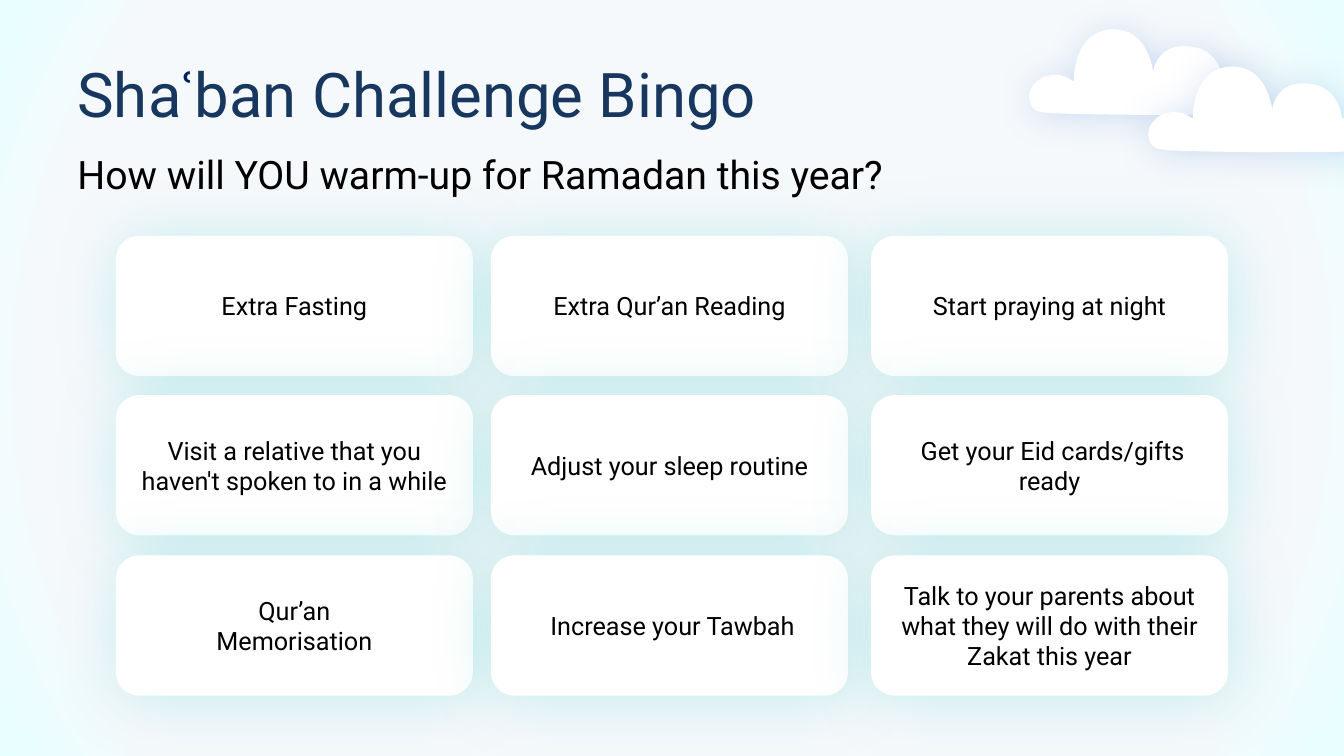
from dataclasses import dataclass

from lxml.etree import SubElement
from pptx import Presentation
from pptx.dml.color import RGBColor
from pptx.enum.shapes import MSO_SHAPE
from pptx.enum.text import MSO_ANCHOR, PP_ALIGN
from pptx.oxml.ns import qn
from pptx.util import Inches, Pt


@dataclass(frozen=True)
class Theme:
    font: str = "Roboto"
    title: str = "17375E"
    title_mark: str = "002060"
    text: str = "000000"
    white: str = "FFFFFF"
    centre: str = "F6F9FC"
    edge: str = "E7FFFF"
    card_shadow: str = "00B4B1"
    cloud_shadow: str = "8EB4E3"
    title_size: int = 44
    subtitle_size: int = 28
    card_size: int = 18


THEME = Theme()

CARD_LEFTS = (1.15, 4.87, 8.64)
CARD_TOPS = (2.34, 3.92, 5.51)
CARD_WIDTH, CARD_HEIGHT = 3.54, 1.39
LABEL_WIDTH, LABEL_HEIGHT = 3.23, 1.26
LABEL_INSET = 0.07
CHALLENGES = (
    ("Extra Fasting", "Extra Qur’an Reading", "Start praying at night"),
    ("Visit a relative that you haven't spoken to in a while",
     "Adjust your sleep routine",
     " Get your Eid cards/gifts ready"),
    ("Qur’an\nMemorisation",
     " Increase your Tawbah",
     "Talk to your parents about what they will do with their Zakat this year"),
)

# Cloud outline: a start point, then Bézier curves (two controls and an end).
CLOUD_START = (1.59, 0.17)
CLOUD_CURVES = (
    ((1.32, 0.14), (1.24, 0.33), (1.23, 0.42)),
    ((1.21, 0.35), (1.16, 0), (0.83, 0)),
    ((0.47, 0.01), (0.44, 0.41), (0.44, 0.52)),
    ((0.37, 0.46), (0.28, 0.44), (0.19, 0.46)),
    ((0.1, 0.48), (0.02, 0.55), (0, 0.64)),
    ((-0.01, 0.7), (0.01, 0.77), (0.06, 0.8)),
    ((0.09, 0.82), (0.13, 0.82), (0.17, 0.83)),
    ((0.49, 0.85), (1.87, 0.86), (1.99, 0.84)),
    ((2.08, 0.82), (2.19, 0.79), (2.2, 0.7)),
    ((2.21, 0.63), (2.16, 0.57), (2.1, 0.54)),
    ((2.04, 0.52), (1.98, 0.51), (1.92, 0.51)),
    ((1.91, 0.47), (1.89, 0.2), (1.59, 0.17)),
)
CLOUD_ORIGINS = ((10.21, 0.29), (11.39, 0.66))


def add_run(p, text, size, color, bold=False, spacing=0):
    """Add a run; spacing is the letter spacing in points."""
    r = p.add_run()
    r.text = text
    r.font.name = THEME.font
    r.font.size = Pt(size)
    r.font.bold = bold
    r.font.color.rgb = RGBColor.from_string(color)
    if spacing:
        r.font._element.set("spc", str(spacing * 100))


def set_background(slide):
    fill = slide.background.fill
    fill.gradient()
    stops = ((0.81, THEME.centre), (1, THEME.edge))
    for stop, (position, color) in zip(fill.gradient_stops, stops):
        stop.position = position
        stop.color.rgb = RGBColor.from_string(color)
    grad = slide.background._cSld.find(".//" + qn("a:gradFill"))
    grad.remove(grad.find(qn("a:lin")))
    circle = SubElement(grad, qn("a:path"), path="circle")
    SubElement(circle, qn("a:fillToRect"), dict.fromkeys("ltrb", "50000"))


def paint_white(sp, shadow, opacity, blur):
    """Fill a shape white, without a line, over a soft coloured shadow."""
    sp.fill.solid()
    sp.fill.fore_color.rgb = RGBColor.from_string(THEME.white)
    sp.line.fill.background()
    sp.shadow.inherit = False
    effects = sp._element.spPr.find(qn("a:effectLst"))
    outer = SubElement(effects, qn("a:outerShdw"), blurRad=str(Pt(blur)),
                       dist=str(Pt(3)), dir=str(45 * 60000),
                       algn="tl", rotWithShape="0")
    color = SubElement(outer, qn("a:srgbClr"), val=shadow)
    SubElement(color, qn("a:alpha"), val=str(opacity * 1000))


def add_text_box(shapes, left, top, width, height, anchor):
    """Add a wrapping text box and return its text frame."""
    box = shapes.add_textbox(
        Inches(left), Inches(top), Inches(width), Inches(height))
    tf = box.text_frame
    tf.word_wrap = True
    tf.vertical_anchor = anchor
    return tf


def add_card(slide, left, top, text):
    """Add a rounded card grouped with its centred label."""
    shapes = slide.shapes.add_group_shape().shapes
    sp = shapes.add_shape(
        MSO_SHAPE.ROUNDED_RECTANGLE, Inches(left), Inches(top),
        Inches(CARD_WIDTH), Inches(CARD_HEIGHT))
    paint_white(sp, THEME.card_shadow, opacity=20, blur=50)
    tf = add_text_box(
        shapes, left + (CARD_WIDTH - LABEL_WIDTH) / 2,
        top + (CARD_HEIGHT - LABEL_HEIGHT) / 2,
        LABEL_WIDTH, LABEL_HEIGHT, MSO_ANCHOR.MIDDLE)
    tf.margin_left = tf.margin_right = Inches(LABEL_INSET)
    tf.margin_top = tf.margin_bottom = Inches(LABEL_INSET)
    for i, line in enumerate(text.split("\n")):
        p = tf.add_paragraph() if i else tf.paragraphs[0]
        p.alignment = PP_ALIGN.CENTER
        add_run(p, line, THEME.card_size, THEME.text)


def add_cloud(slide, left, top):
    """Join the curve ends with lines, then bend each line into its curve."""
    start_x, start_y = CLOUD_START
    builder = slide.shapes.build_freeform(
        Inches(left + start_x), Inches(top + start_y))
    builder.add_line_segments(
        [(Inches(left + x), Inches(top + y)) for *_, (x, y) in CLOUD_CURVES])
    sp = builder.convert_to_shape()
    outline = sp._element.spPr.find(".//" + qn("a:path"))
    for line in outline.findall(qn("a:lnTo")):
        outline.remove(line)
    for curve in CLOUD_CURVES:
        bezier = SubElement(outline, qn("a:cubicBezTo"))
        for x, y in curve:
            SubElement(bezier, qn("a:pt"), x=str(Inches(x)), y=str(Inches(y)))
    SubElement(outline, qn("a:close"))
    paint_white(sp, THEME.cloud_shadow, opacity=40, blur=27)


def main():
    prs = Presentation()
    prs.slide_width = Inches(13.33)
    prs.slide_height = Inches(7.5)
    slide = prs.slides.add_slide(prs.slide_layouts[6])
    set_background(slide)

    title = add_text_box(slide.shapes, 0.67, 0.3, 12, 1.25, MSO_ANCHOR.MIDDLE)
    p = title.paragraphs[0]
    add_run(p, "Sh", THEME.title_size, THEME.title)
    add_run(p, "a", THEME.title_size, THEME.title, spacing=-2)
    add_run(p, "ʿ", THEME.title_size, THEME.title_mark, bold=True, spacing=2)
    add_run(p, "ban Challenge Bingo", THEME.title_size, THEME.title)

    subtitle = add_text_box(slide.shapes, 0.67, 1.44, 12, 0.62, MSO_ANCHOR.TOP)
    add_run(subtitle.paragraphs[0],
            "How will YOU warm-up for Ramadan this year?",
            THEME.subtitle_size, THEME.text)

    for top, challenges in zip(CARD_TOPS, CHALLENGES):
        for left, text in zip(CARD_LEFTS, challenges):
            add_card(slide, left, top, text)

    for left, top in CLOUD_ORIGINS:
        add_cloud(slide, left, top)

    prs.save("out.pptx")


if __name__ == "__main__":
    main()
